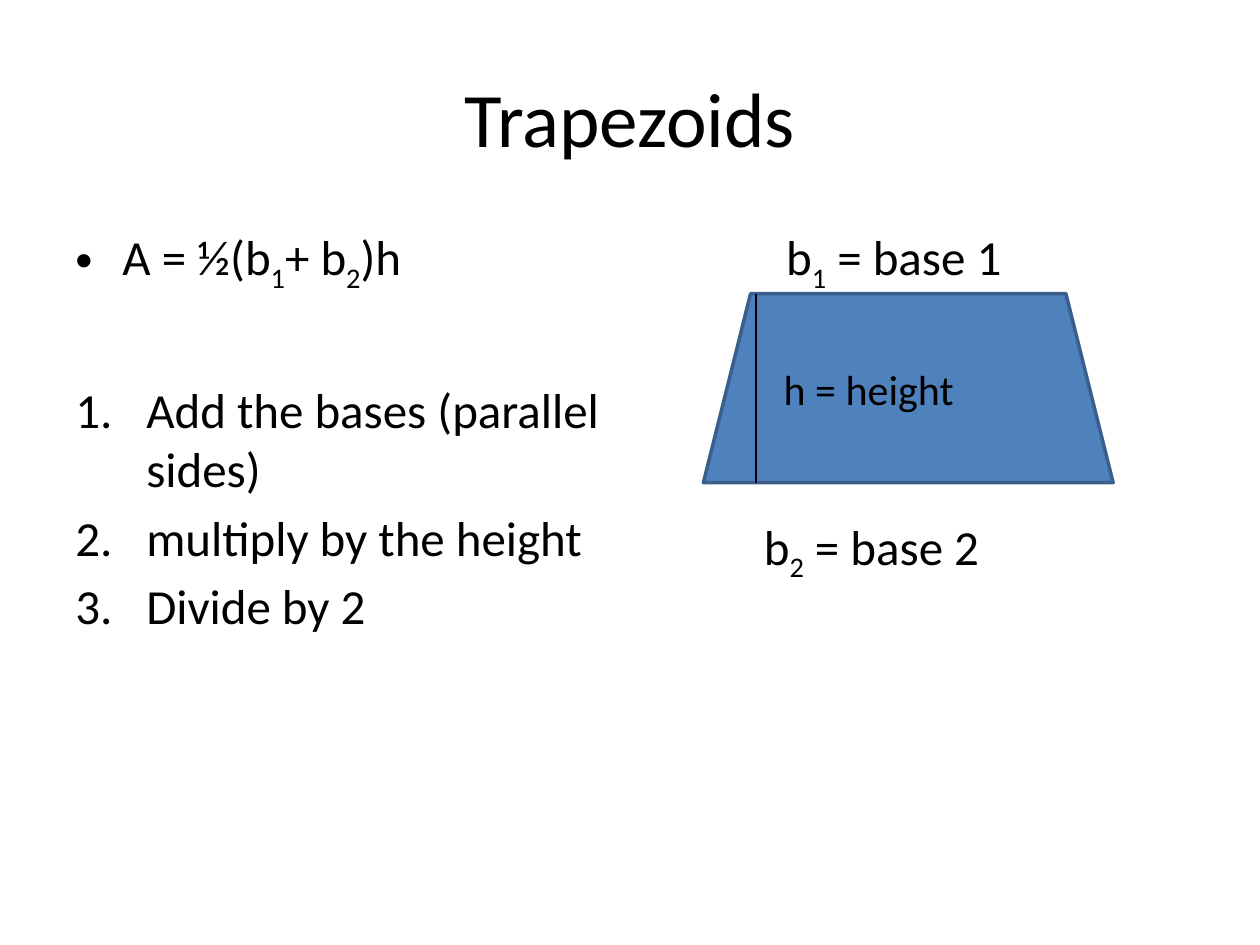
from pptx import Presentation
from pptx import util as u
from pptx.dml.color import RGBColor
from pptx.enum import shapes, text
from pptx.oxml.ns import qn
from lxml import etree


def colour(code):
    return RGBColor.from_string(code)


def write(paragraph, pieces, size):
    for position, piece in enumerate(pieces):
        run = paragraph.add_run()
        run.text = piece
        for name, value in {"name": "Calibri", "size": u.Pt(size)}.items():
            setattr(run.font, name, value)
        run.font.color.rgb = colour("000000")
        if position % 2:
            run._r.get_or_add_rPr().set("baseline", "-25000")


deck = Presentation()
deck.slide_width, deck.slide_height = u.Cm(25.4), u.Cm(19.05)
slide = deck.slides.add_slide(deck.slide_layouts[5])

heading = slide.shapes.title
for name, value in {"left": 1.27, "top": 0.76, "width": 22.86, "height": 3.18}.items():
    setattr(heading, name, u.Cm(value))
heading.text_frame.vertical_anchor = text.MSO_ANCHOR.MIDDLE
heading.text_frame.paragraphs[0].alignment = text.PP_ALIGN.CENTER
write(heading.text_frame.paragraphs[0], ["Trapezoids"], 44)

bullet = ("buChar", {"char": "•"})
number = ("buAutoNum", {"type": "arabicPeriod"})
columns = [
    (1.27, [
        (["A = ½(b", "1", "+ b", "2", ")h"], 0.95, 0, bullet),
        (["Add the bases (parallel sides)"], 1.43, 49, number),
        (["multiply by the height"], 1.43, 5.6, number),
        (["Divide by 2"], 1.43, 5.6, number),
    ]),
    (12.9, [
        (["b", "1", " = base 1"], 2.7, 0, None),
        (["b", "2", " = base 2"], 2.25, 127, None),
    ]),
]
for left, lines in columns:
    frame = slide.shapes.add_textbox(u.Cm(left), u.Cm(4.45), u.Cm(11.23), u.Cm(12.57)).text_frame
    frame.word_wrap = True
    for index, (pieces, indent, gap, marker) in enumerate(lines):
        paragraph = frame.add_paragraph() if index else frame.paragraphs[0]
        paragraph.space_before = u.Pt(gap)
        write(paragraph, pieces, 28)
        properties = paragraph._p.get_or_add_pPr()
        properties.set("marL", str(u.Cm(indent)))
        if marker:
            tag, settings = marker
            properties.set("indent", str(-u.Cm(indent)))
            font = etree.SubElement(properties, qn("a:buFont"))
            font.set("typeface", "Arial" if marker == bullet else "+mj-lt")
            etree.SubElement(properties, qn("a:" + tag), settings)

top, tall = u.Cm(5.92), u.Cm(3.81)
trapezoid = slide.shapes.add_shape(
    shapes.MSO_SHAPE.TRAPEZOID, u.Cm(14.18), top, u.Cm(8.26), tall)
trapezoid.shadow.inherit = False
trapezoid.fill.solid()
trapezoid.fill.fore_color.rgb = colour("4F81BD")
trapezoid.line.color.rgb = colour("3A5F8C")
trapezoid.line.width = u.Pt(2)

height = slide.shapes.add_connector(
    shapes.MSO_CONNECTOR.STRAIGHT, u.Cm(15.24), top, u.Cm(15.24), top + tall)
height.line.color.rgb = colour("000000")
height.line.width = u.Pt(0.75)
etree.SubElement(height._element.spPr, qn("a:effectLst"))

height_label = slide.shapes.add_textbox(u.Cm(15.55), u.Cm(7.2), u.Cm(5.5), u.Cm(1.28)).text_frame
height_label.word_wrap = True
write(height_label.paragraphs[0], ["h = height"], 24)

deck.save("out.pptx")
